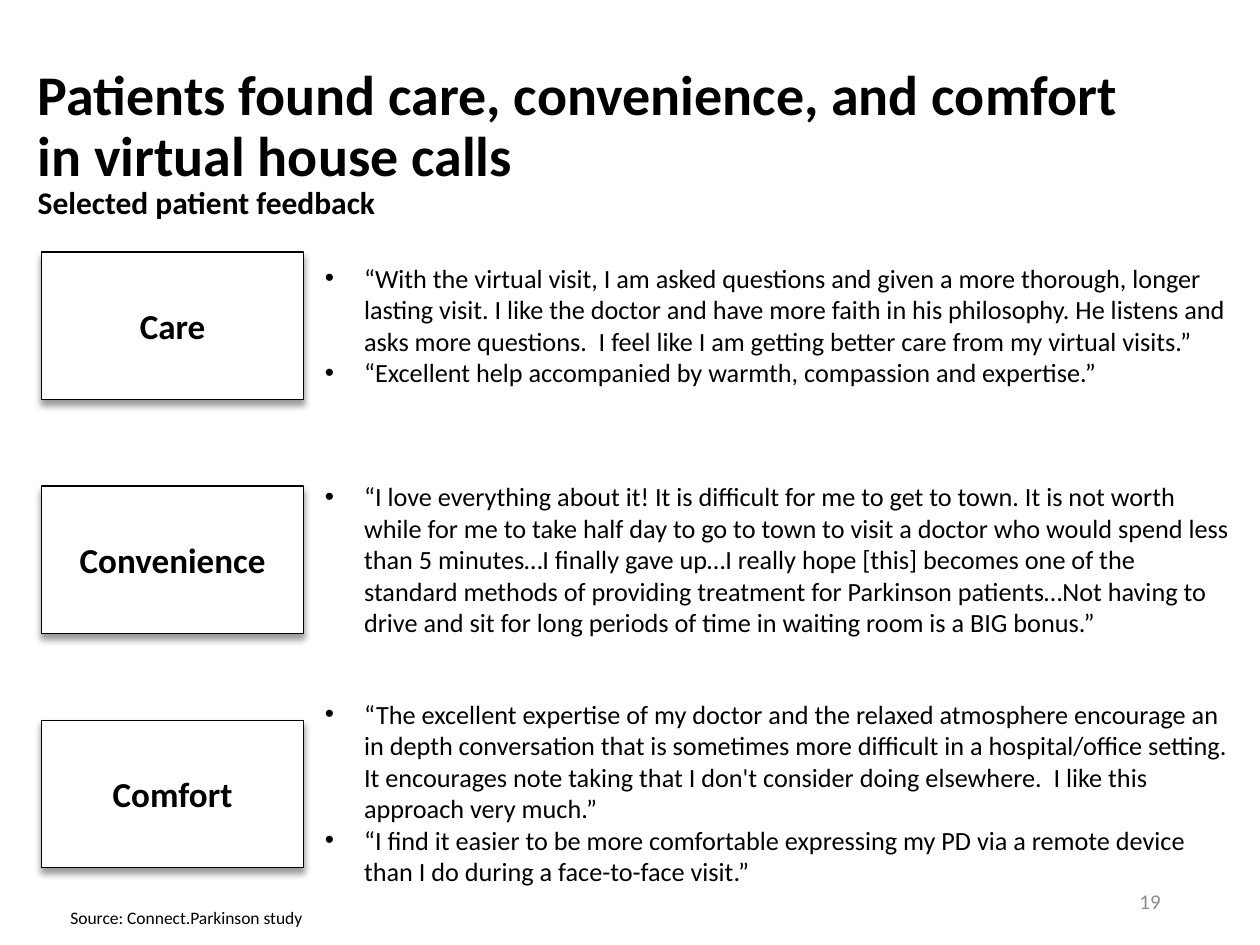
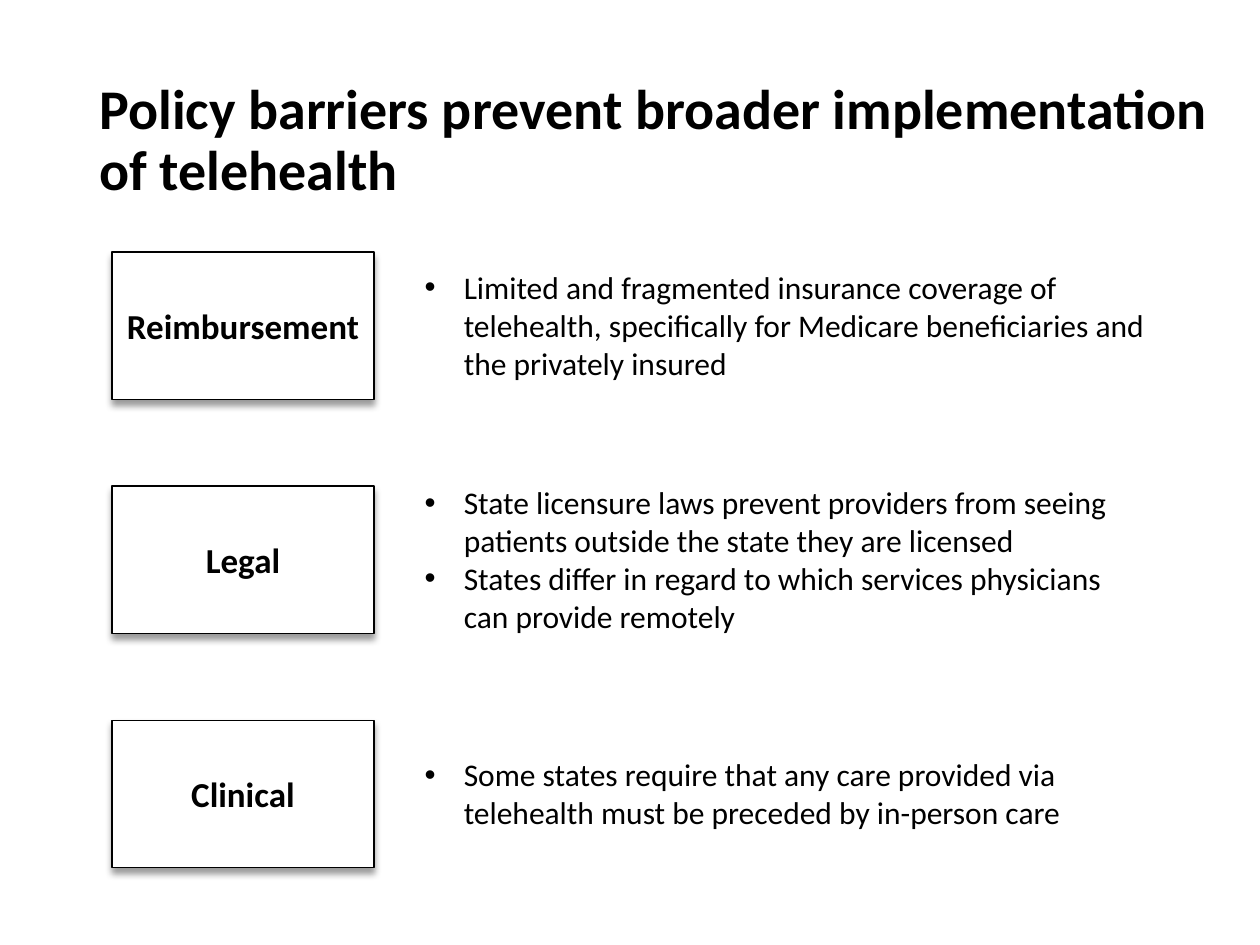
from lxml.etree import SubElement
from pptx import Presentation
from pptx.dml.color import RGBColor
from pptx.enum.shapes import MSO_SHAPE as Preset
from pptx.enum.text import MSO_ANCHOR as Anchor, MSO_AUTO_SIZE as AutoSize, PP_ALIGN as Align
from pptx.oxml.ns import qn
from pptx.util import Cm, Pt

COLORS = {"ink": "000000", "paper": "FFFFFF", "muted": "8C8C8C"}
FONT = "Calibri"

SLIDES = [
    {
        "title": "Patients found care, convenience, and comfort in virtual house calls",
        "title_area": (0.51, 0.89, 22.86, 3.38),
        "label_left": 0.84,
        "text_left": 6.3,
        "text_size": 15,
        "rows": [
            ("Care", 18.8, 2.82, [
                "“With the virtual visit, I am asked questions and given a more thorough, longer lasting visit. "
                "I like the doctor and have more faith in his philosophy. He listens and asks more questions.  "
                "I feel like I am getting better care from my virtual visits.”",
                "“Excellent help accompanied by warmth, compassion and expertise.”",
            ]),
            ("Convenience", 18.8, 3.45, [
                "“I love everything about it! It is difficult for me to get to town. It is not worth while for me "
                "to take half day to go to town to visit a doctor who would spend less than 5 minutes…I finally "
                "gave up…I really hope [this] becomes one of the standard methods of providing treatment for "
                "Parkinson patients…Not having to drive and sit for long periods of time in waiting room is a "
                "BIG bonus.”",
            ]),
            ("Comfort", 18.8, 4.11, [
                "“The excellent expertise of my doctor and the relaxed atmosphere encourage an in depth "
                "conversation that is sometimes more difficult in a hospital/office setting. It encourages note "
                "taking that I don't consider doing elsewhere.  I like this approach very much.”",
                "“I find it easier to be more comfortable expressing my PD via a remote device than I do during "
                "a face-to-face visit.”",
            ]),
        ],
        "notes": [
            ("Selected patient feedback", (0.51, 3.56, 7.52, 1.02), {"size": 18, "bold": True}),
            ("Source: Connect.Parkinson study", (1.17, 18.16, 11.1, 0.69), {"size": 10}),
            ("19", (17.93, 17.65, 5.72, 1.02),
             {"size": 12, "color": "muted", "align": Align.RIGHT, "anchor": Anchor.MIDDLE}),
        ],
    },
    {
        "title": "Policy barriers prevent broader implementation of telehealth",
        "title_area": (1.75, 1.02, 22.99, 3.68),
        "label_left": 2.26,
        "text_left": 8.31,
        "text_size": 18,
        "rows": [
            ("Reimbursement", 15.8, 2.57, [
                "Limited and fragmented insurance coverage of telehealth, specifically for Medicare "
                "beneficiaries and the privately insured",
            ]),
            ("Legal", 15.06, 3.33, [
                "State licensure laws prevent providers from seeing patients outside the state they are licensed",
                "States differ in regard to which services physicians can provide remotely",
            ]),
            ("Clinical", 15.57, 1.8, [
                "Some states require that any care provided via telehealth must be preceded by in-person care",
            ]),
        ],
        "notes": [],
    },
]

LABEL_WIDTH, LABEL_HEIGHT = 5.28, 2.97
FIRST_ROW_TOP, ROW_STEP = 5.08, 4.72
BULLET_INDENT = Cm(0.79)


def color(name):
    return RGBColor.from_string(COLORS[name])


def set_text(shape, lines, size, bold=False, color_name="ink", align=Align.LEFT,
             anchor=Anchor.TOP, spacing=None, bullets=False):
    frame = shape.text_frame
    frame_format = {"word_wrap": True, "auto_size": AutoSize.NONE, "vertical_anchor": anchor}
    for name, value in frame_format.items():
        setattr(frame, name, value)
    for index, line in enumerate(lines):
        para = frame.add_paragraph() if index else frame.paragraphs[0]
        for name, value in {"alignment": align, "line_spacing": spacing}.items():
            setattr(para, name, value)
        span = para.add_run()
        span.text = line
        for name, value in {"name": FONT, "size": Pt(size), "bold": bold}.items():
            setattr(span.font, name, value)
        span.font.color.rgb = color(color_name)
        if bullets:
            add_bullet(para)


def add_bullet(para):
    props = para._p.get_or_add_pPr()
    props.set("marL", str(BULLET_INDENT))
    props.set("indent", str(-BULLET_INDENT))
    SubElement(props, qn("a:buFont"), typeface="Arial")
    SubElement(props, qn("a:buChar"), char="•")


def add_shadow(shape):
    shape.shadow.inherit = False
    effects = shape._element.spPr.find(qn("a:effectLst"))
    shadow = SubElement(effects, qn("a:outerShdw"), blurRad=str(Pt(4)), dist=str(Pt(3)),
                        dir="5400000", algn="t", rotWithShape="0")
    tint = SubElement(shadow, qn("a:srgbClr"), val=COLORS["ink"])
    SubElement(tint, qn("a:alpha"), val="40000")


def add_title(page, text, area):
    title = page.shapes.title
    for name, value in zip(("left", "top", "width", "height"), area):
        setattr(title, name, Cm(value))
    set_text(title, [text], 32, bold=True, anchor=Anchor.MIDDLE, spacing=0.9)


def add_label(page, text, left, top):
    box = page.shapes.add_shape(Preset.RECTANGLE, Cm(left), Cm(top), Cm(LABEL_WIDTH), Cm(LABEL_HEIGHT))
    box.fill.solid()
    box.fill.fore_color.rgb = color("paper")
    box.line.color.rgb = color("ink")
    box.line.width = Pt(0.75)
    add_shadow(box)
    set_text(box, [text], 20, bold=True, align=Align.CENTER, anchor=Anchor.MIDDLE)


def add_text(page, lines, area, **text_format):
    box = page.shapes.add_textbox(*map(Cm, area))
    set_text(box, lines, **text_format)


def add_page(deck, content):
    page = deck.slides.add_slide(deck.slide_layouts[5])
    add_title(page, content["title"], content["title_area"])
    for index, (label, width, height, lines) in enumerate(content["rows"]):
        top = FIRST_ROW_TOP + index * ROW_STEP
        add_label(page, label, content["label_left"], top)
        text_top = top + (LABEL_HEIGHT - height) / 2
        add_text(page, lines, (content["text_left"], text_top, width, height),
                 size=content["text_size"], bullets=True)
    for text, area, text_format in content["notes"]:
        settings = dict(text_format)
        settings["color_name"] = settings.pop("color", "ink")
        add_text(page, [text], area, **settings)


def main():
    deck = Presentation()
    deck.slide_width, deck.slide_height = Cm(25.4), Cm(19.05)
    for content in SLIDES:
        add_page(deck, content)
    deck.save("out.pptx")


if __name__ == "__main__":
    main()
